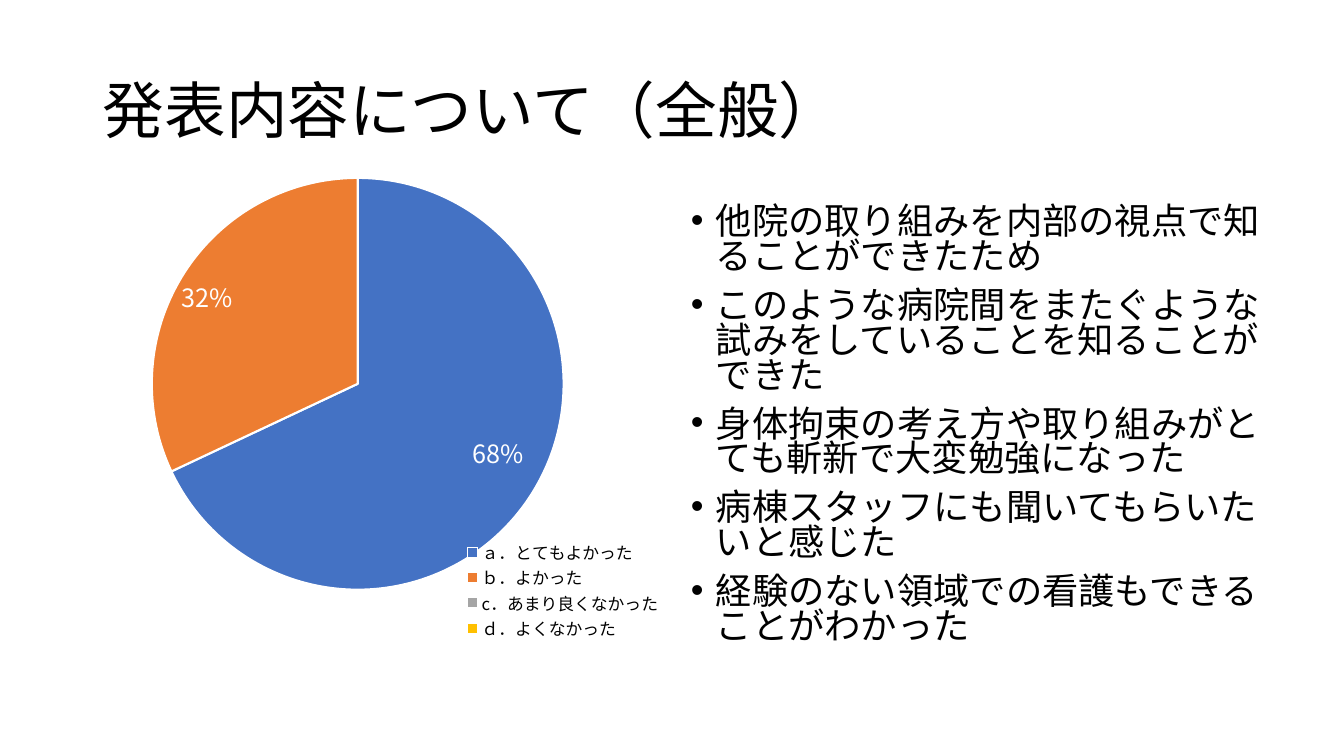
from copy import deepcopy
from lxml.etree import SubElement
from pptx import Presentation
from pptx.chart.data import CategoryChartData
from pptx.dml.color import RGBColor
from pptx.enum.chart import XL_CHART_TYPE, XL_LABEL_POSITION, XL_LEGEND_POSITION
from pptx.enum.text import MSO_ANCHOR
from pptx.oxml import parse_xml
from pptx.oxml.ns import nsdecls, qn
from pptx.util import Emu, Pt

SCALE = 914400 / 100.8
FACE = "Noto Sans CJK JP"
COLORS = {"text": "000000", "white": "FFFFFF", "best": "4472C4",
          "good": "ED7D31", "poor": "A5A5A5", "bad": "FFC000"}
# name, share, colour, label shift in px
VOTES = [("ａ．とてもよかった", 68, "best", (-3, -20)),
         ("ｂ．よかった", 32, "good", (-8, 2)),
         ("c．あまり良くなかった", 0, "poor", None),
         ("ｄ．よくなかった", 0, "bad", None)]
REASONS = ["他院の取り組みを内部の視点で知ることができたため",
           "このような病院間をまたぐような試みをしていることを知ることができた",
           "身体拘束の考え方や取り組みがとても斬新で大変勉強になった",
           "病棟スタッフにも聞いてもらいたいと感じた",
           "経験のない領域での看護もできることがわかった"]


def px(n):
    return Emu(round(n * SCALE))


def color(name):
    return RGBColor.from_string(COLORS[name])


def assign(item, values):
    for name, value in values.items():
        setattr(item, name, value)


def layout(tags, spots):
    """Build a manual chart layout from fractions of the chart frame."""
    tags += "".join(f'<c:{k} val="{v:.3f}"/>' for k, v in spots.items())
    return parse_xml(f'<c:layout {nsdecls("c")}><c:manualLayout>{tags}'
                     '</c:manualLayout></c:layout>')


class Deck:
    def __init__(self, width, height):
        self.show = Presentation()
        assign(self.show, {"slide_width": px(width), "slide_height": px(height)})
        self.slide = self.show.slides.add_slide(self.show.slide_layouts[6])

    def style(self, font, size, tint="text"):
        assign(font, {"size": Pt(size), "name": FACE})
        font.color.rgb = color(tint)

    def text(self, box, lines, size, pitch, anchor=MSO_ANCHOR.TOP, gap=0, indent=0):
        """Add a text box; a non-zero indent gives its lines bullets."""
        frame = self.slide.shapes.add_textbox(*map(px, box)).text_frame
        assign(frame, {"word_wrap": True, "vertical_anchor": anchor})
        for i, line in enumerate(lines):
            para = frame.paragraphs[0] if i == 0 else frame.add_paragraph()
            assign(para, {"line_spacing": pitch, "space_before": Pt(gap if i else 0)})
            if indent:
                props = para._p.get_or_add_pPr()
                props.set("marL", str(px(indent)))
                props.set("indent", str(-px(indent)))
                SubElement(props, qn("a:buFont"), typeface="Arial")
                SubElement(props, qn("a:buChar"), char="•")
            run = para.add_run()
            run.text = line
            self.style(run.font, size)
            SubElement(run.font._element, qn("a:ea"), typeface=FACE)

    def place(self, part, box, frame, inner=False):
        """Fix a chart part at a slide box."""
        left, top, width, height = frame
        tags = '<c:layoutTarget val="inner"/>' if inner else ""
        tags += '<c:xMode val="edge"/><c:yMode val="edge"/>'
        for old in part.findall(qn("c:layout")):
            part.remove(old)
        node = layout(tags, {"x": (box[0] - left) / width,
                             "y": (box[1] - top) / height,
                             "w": box[2] / width, "h": box[3] / height})
        part.insert(1 if part.tag == qn("c:legend") else 0, node)

    def label(self, shared, i, shift, frame):
        """Make one slice label: moved by shift, or hidden without one."""
        label = parse_xml(f'<c:dLbl {nsdecls("c")}><c:idx val="{i}"/></c:dLbl>')
        if shift:
            label.append(layout("", {"x": shift[0] / frame[2],
                                     "y": shift[1] / frame[3]}))
            for part in shared:
                if part.tag != qn("c:showLeaderLines"):
                    label.append(deepcopy(part))
        else:
            SubElement(label, qn("c:delete"), val="1")
        return label

    def pie(self, box, disc, key, votes):
        data = CategoryChartData()
        data.categories = [vote[0] for vote in votes]
        data.add_series("Series 1", [vote[1] for vote in votes])
        chart = self.slide.shapes.add_chart(
            XL_CHART_TYPE.PIE, *map(px, box), data).chart
        assign(chart, {"has_title": False, "has_legend": True})
        self.style(chart.font, 10)
        legend = chart.legend
        assign(legend, {"position": XL_LEGEND_POSITION.BOTTOM,
                        "include_in_layout": False})
        self.style(legend.font, 12)
        self.place(legend._element, key, box)
        self.place(chart._chartSpace.chart.plotArea, disc, box, inner=True)
        plot = chart.plots[0]
        plot.vary_by_categories = True
        series = plot.series[0]
        labels = series.data_labels
        assign(labels, {"show_percentage": True, "show_value": False,
                        "number_format": "0%", "number_format_is_linked": False,
                        "position": XL_LABEL_POSITION.INSIDE_END})
        self.style(labels.font, 18, "white")
        shared = list(labels._element)
        for i, (_, _, tint, shift) in enumerate(votes):
            look = series.points[i].format
            look.fill.solid()
            look.fill.fore_color.rgb = color(tint)
            look.line.color.rgb = color("white")
            look.line.width = Pt(1.5)
            labels._element.insert(i, self.label(shared, i, shift, box))


def main():
    deck = Deck(1344, 756)
    deck.text((93, 41, 1159, 146), ["発表内容について（全般）"], 44, 0.9,
              MSO_ANCHOR.MIDDLE)
    deck.text((681, 202, 618, 480), REASONS, 25.9, 0.8, gap=10, indent=25)
    deck.pie((7, 164, 703, 480), (152, 178, 412, 412), (461, 540, 204, 101), VOTES)
    deck.show.save("out.pptx")


if __name__ == "__main__":
    main()
